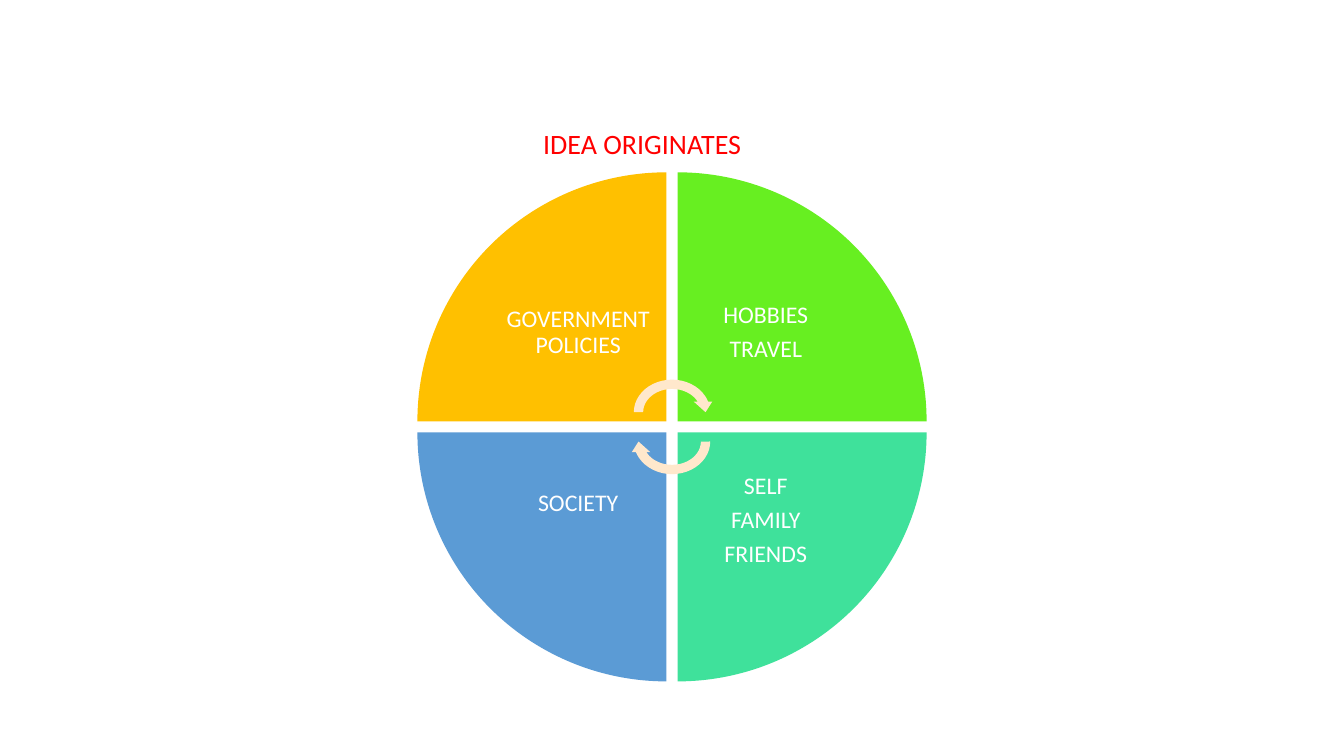
"""Build a slide showing the four sources in which ideas originate."""
import pptx
import pptx.dml.color
import pptx.enum.shapes
import pptx.enum.text
import pptx.util
from dataclasses import dataclass
from pptx.util import Inches

TITLE = "IDEA ORIGINATES"
# column, row, fill, lines, label lift
QUADRANTS = [
    (0, 0, "FFC000", ["GOVERNMENT POLICIES"], 0),
    (1, 0, "67EF21", ["HOBBIES", "TRAVEL"], 0),
    (1, 1, "3FE19B", ["SELF", "FAMILY", "FRIENDS"], 0),
    (0, 1, "5B9BD5", ["SOCIETY"], 0.17),
]
ARROWS = [(3.72, 0), (4.01, 180)]

WHEEL_LEFT, WHEEL_TOP = 4.14, 1.71
WEDGE, STEP, LABEL = 2.47, 2.58, 1.75
ARROW_LEFT, ARROW_WIDTH, ARROW_HEIGHT = 6.24, 0.85, 0.74


@dataclass(frozen=True)
class Theme:
    font: str = "Calibri"
    title_size: int = 20
    label_size: int = 17
    title: str = "FF0000"
    label: str = "FFFFFF"
    arrow: str = "FFE8CC"


THEME = Theme()
SHAPES = pptx.enum.shapes.MSO_SHAPE
ANCHOR = pptx.enum.text.MSO_ANCHOR


def rgb(color):
    return pptx.dml.color.RGBColor.from_string(color)


def style_paragraph(paragraph, size, color):
    paragraph.alignment = pptx.enum.text.PP_ALIGN.CENTER
    paragraph.font.name = THEME.font
    paragraph.font.size = pptx.util.Pt(size)
    paragraph.font.color.rgb = rgb(color)


def add_filled(slide, kind, left, top, width, height, color, rotation):
    shape = slide.shapes.add_shape(
        kind, Inches(left), Inches(top), Inches(width), Inches(height))
    shape.shadow.inherit = False
    shape.fill.solid()
    shape.fill.fore_color.rgb = rgb(color)
    shape.line.fill.background()
    shape.rotation = rotation


def add_label(slide, left, top, lines):
    box = slide.shapes.add_textbox(
        Inches(left), Inches(top), Inches(LABEL), Inches(LABEL))
    frame = box.text_frame
    frame.word_wrap = True
    frame.vertical_anchor = ANCHOR.MIDDLE
    frame.margin_left = frame.margin_right = Inches(0.13)
    frame.margin_top = frame.margin_bottom = Inches(0.13)
    frame.text = "\n".join(lines)
    for paragraph in frame.paragraphs:
        style_paragraph(paragraph, THEME.label_size, THEME.label)
        paragraph.line_spacing = 0.9
        paragraph.space_after = pptx.util.Pt(6)


def add_title(slide):
    title = slide.shapes.title
    title.left, title.top = Inches(3.82), Inches(1.2)
    title.width, title.height = Inches(5.1), Inches(0.44)
    frame = title.text_frame
    frame.text = TITLE
    frame.word_wrap = True
    frame.auto_size = pptx.enum.text.MSO_AUTO_SIZE.NONE
    frame.vertical_anchor = ANCHOR.TOP
    style_paragraph(frame.paragraphs[0], THEME.title_size, THEME.title)


def main():
    presentation = pptx.Presentation()
    presentation.slide_width = Inches(13.33)
    presentation.slide_height = Inches(7.5)
    slide = presentation.slides.add_slide(presentation.slide_layouts[5])
    add_title(slide)
    inset = WEDGE - LABEL
    for index, (column, row, color, lines, lift) in enumerate(QUADRANTS):
        left = WHEEL_LEFT + column * STEP
        top = WHEEL_TOP + row * STEP
        add_filled(slide, SHAPES.PIE_WEDGE, left, top, WEDGE, WEDGE, color, 90 * index)
        add_label(slide, left + inset * (1 - column),
                  top + inset * (1 - row) - lift, lines)
    for top, rotation in ARROWS:
        add_filled(slide, SHAPES.CIRCULAR_ARROW, ARROW_LEFT, top,
                   ARROW_WIDTH, ARROW_HEIGHT, THEME.arrow, rotation)
    presentation.save("out.pptx")


if __name__ == "__main__":
    main()
